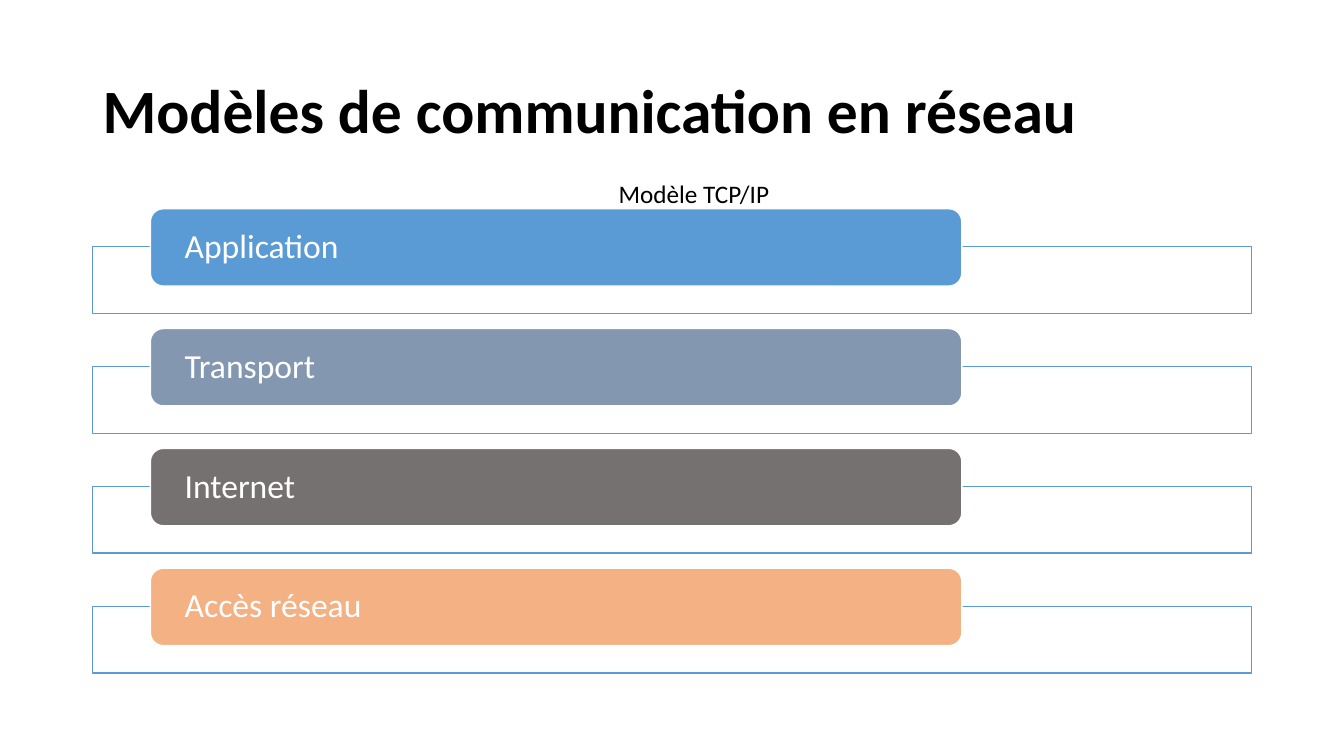
from dataclasses import dataclass

from lxml import etree
from pptx import Presentation
from pptx.dml.color import RGBColor
from pptx.enum.shapes import MSO_SHAPE
from pptx.enum.text import MSO_ANCHOR, MSO_AUTO_SIZE, PP_ALIGN
from pptx.oxml.ns import qn
from pptx.shapes.autoshape import Shape
from pptx.shapes.shapetree import GroupShapes
from pptx.text.text import TextFrame
from pptx.util import Cm, Pt

RECTANGLE = MSO_SHAPE.RECTANGLE
ROUNDED = MSO_SHAPE.ROUNDED_RECTANGLE
TOP, MIDDLE = MSO_ANCHOR.TOP, MSO_ANCHOR.MIDDLE
LEFT = PP_ALIGN.LEFT
NO_FIT, GROW = MSO_AUTO_SIZE.NONE, MSO_AUTO_SIZE.SHAPE_TO_FIT_TEXT
TITLE_ONLY = 5
FONT = "Calibri"

COLORS = {
    "black": "000000",
    "white": "FFFFFF",
    "blue": "5B9BD5",
    "slate": "8497B0",
    "gray": "767171",
    "orange": "F4B183",
}


@dataclass(frozen=True)
class Layer:
    name: str
    color: str


@dataclass(frozen=True)
class Area:
    """Left, top, width and height in centimetres."""
    left: float
    top: float
    width: float
    height: float

    def lowered(self, distance: float) -> "Area":
        return Area(self.left, self.top + distance, self.width, self.height)

    def lengths(self) -> tuple[Cm, Cm, Cm, Cm]:
        return Cm(self.left), Cm(self.top), Cm(self.width), Cm(self.height)


LAYERS = [
    Layer("Application", "blue"),
    Layer("Transport", "slate"),
    Layer("Internet", "gray"),
    Layer("Accès réseau", "orange"),
]
TITLE_AREA = Area(2.33, 1.01, 29.21, 3.68)
CAPTION_AREA = Area(15.34, 4.37, 4.34, 1.02)
FRAME_AREA = Area(2.33, 6.22, 29.21, 1.68)
LABEL_AREA = Area(3.79, 5.26, 20.45, 1.95)
LAYER_PITCH = 3.02


def rgb(color: str) -> RGBColor:
    return RGBColor.from_string(COLORS[color])


def write_text(frame: TextFrame, text: str, *, size: float, color: str = "black",
               bold: bool = False, anchor: MSO_ANCHOR = MIDDLE,
               line_spacing: float = 0.9, wrap: bool = True,
               fit: MSO_AUTO_SIZE = NO_FIT) -> None:
    frame.word_wrap = wrap
    frame.auto_size = fit
    frame.vertical_anchor = anchor
    para = frame.paragraphs[0]
    para.alignment = LEFT
    para.line_spacing = line_spacing
    span = para.add_run()
    span.text = text
    span.font.name = FONT
    span.font.size = Pt(size)
    span.font.bold = bold
    span.font.color.rgb = rgb(color)


def add_box(shapes: GroupShapes, kind: MSO_SHAPE, area: Area,
            fill: str, line: str) -> Shape:
    box = shapes.add_shape(kind, *area.lengths())
    box.shadow.inherit = False
    box.fill.solid()
    box.fill.fore_color.rgb = rgb(fill)
    box.line.color.rgb = rgb(line)
    box.line.width = Pt(1)
    return box


def set_opacity(box: Shape, percent: int) -> None:
    fill_color = box.fill._xPr.find(qn("a:solidFill"))[0]
    etree.SubElement(fill_color, qn("a:alpha")).set("val", str(percent * 1000))


def add_layer(shapes: GroupShapes, layer: Layer, offset: float) -> None:
    frame = add_box(shapes, RECTANGLE, FRAME_AREA.lowered(offset), "white", "blue")
    set_opacity(frame, 90)

    label = add_box(shapes, ROUNDED, LABEL_AREA.lowered(offset), layer.color, "white")
    text_frame = label.text_frame
    text_frame.margin_left = text_frame.margin_right = Cm(0.77)
    text_frame.margin_top = text_frame.margin_bottom = 0
    write_text(text_frame, layer.name, size=24, color="white")


def main() -> None:
    deck = Presentation()
    deck.slide_width, deck.slide_height = Cm(33.87), Cm(19.05)
    page = deck.slides.add_slide(deck.slide_layouts[TITLE_ONLY])

    # Title
    title = page.shapes.title
    title.left, title.top, title.width, title.height = TITLE_AREA.lengths()
    write_text(title.text_frame, "Modèles de communication en réseau",
               size=44, bold=True)

    # Stack of layers
    stack = page.shapes.add_group_shape()
    for index, layer in enumerate(LAYERS):
        add_layer(stack.shapes, layer, index * LAYER_PITCH)

    # Caption
    caption = page.shapes.add_textbox(*CAPTION_AREA.lengths())
    write_text(caption.text_frame, "Modèle TCP/IP", size=18, anchor=TOP,
               line_spacing=1.0, wrap=False, fit=GROW)

    deck.save("out.pptx")


if __name__ == "__main__":
    main()
